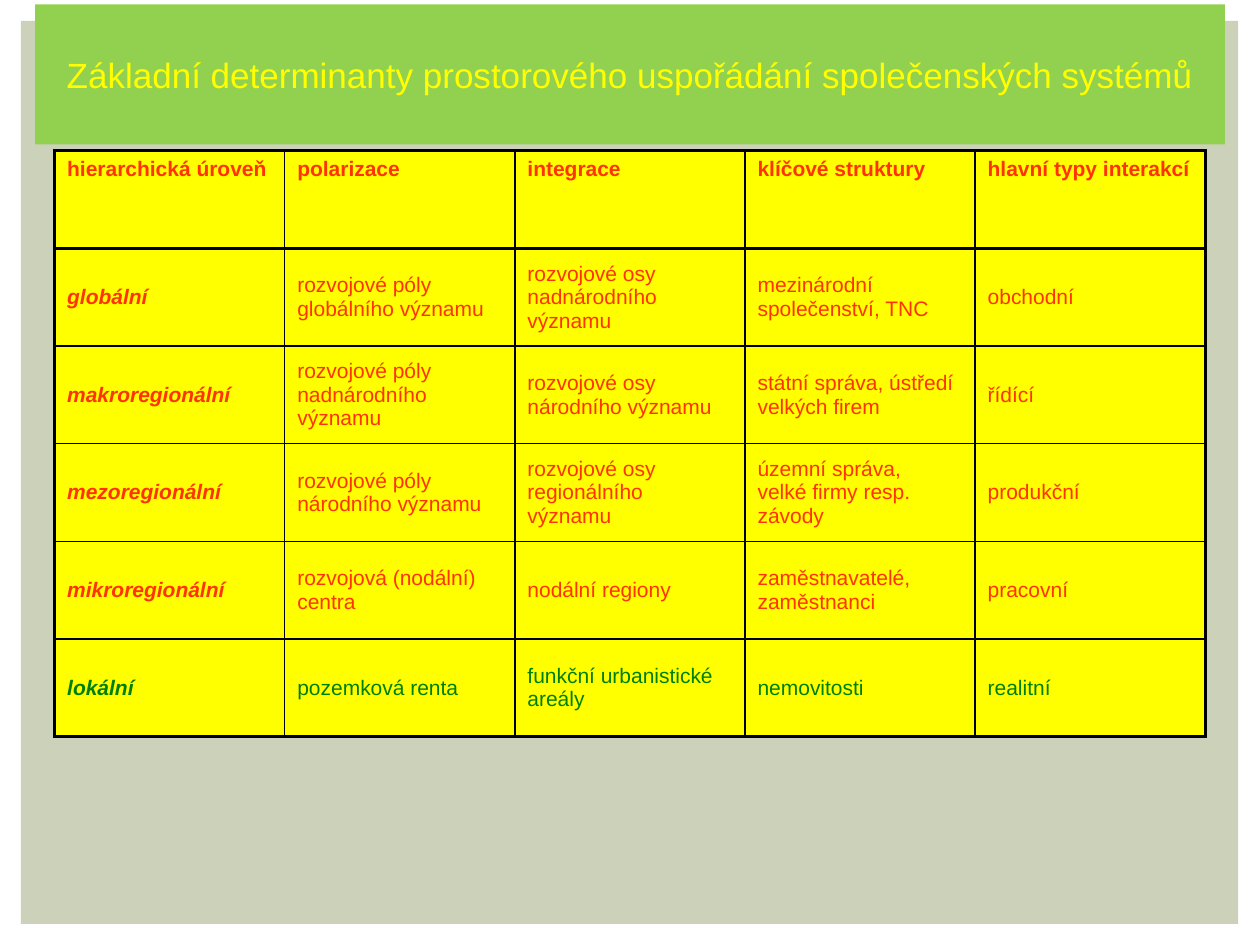
"""Build a slide with a table of spatial determinants of social systems."""
from lxml.etree import SubElement
from pptx import Presentation
from pptx.dml.color import RGBColor
from pptx.enum.shapes import MSO_SHAPE
from pptx.enum.text import MSO_ANCHOR, PP_ALIGN
from pptx.oxml.ns import qn
from pptx.util import Pt

COLORS = {
    "panel": "CCD1B9",
    "banner": "92D050",
    "yellow": "FFFF00",
    "red": "FF3300",
    "green": "008000",
    "border": "000000",
}
ROWS = [
    ["hierarchická úroveň", "polarizace", "integrace", "klíčové struktury", "hlavní typy interakcí"],
    ["globální", "rozvojové póly globálního významu", "rozvojové osy nadnárodního významu",
     "mezinárodní společenství, TNC", "obchodní"],
    ["makroregionální", "rozvojové póly nadnárodního významu", "rozvojové osy národního významu",
     "státní správa, ústředí velkých firem", "řídící"],
    ["mezoregionální", "rozvojové póly národního významu", "rozvojové osy regionálního významu",
     "územní správa,\nvelké firmy resp. závody", "produkční"],
    ["mikroregionální", "rozvojová (nodální) centra", "nodální regiony",
     "zaměstnavatelé, zaměstnanci", "pracovní"],
    ["lokální", "pozemková renta", "funkční urbanistické areály", "nemovitosti", "realitní"],
]
COLUMN_WIDTH = 131.5
ROW_HEIGHT = 55.8


def add_rectangle(page, left, top, width, height, color):
    box = page.shapes.add_shape(MSO_SHAPE.RECTANGLE, Pt(left), Pt(top), Pt(width), Pt(height))
    box.shadow.inherit = False
    box.fill.solid()
    box.fill.fore_color.rgb = RGBColor.from_string(COLORS[color])
    box.line.fill.background()
    return box


def add_border(cell, side, width):
    line = SubElement(cell._tc.get_or_add_tcPr(), qn(f"a:ln{side}"), w=str(Pt(width)))
    fill = SubElement(line, qn("a:solidFill"))
    SubElement(fill, qn("a:srgbClr"), val=COLORS["border"])


deck = Presentation()
deck.slide_width, deck.slide_height = Pt(720), Pt(540)
page = deck.slides.add_slide(deck.slide_layouts[6])

add_rectangle(page, 12, 12, 695.5, 516, "panel")
banner = add_rectangle(page, 20, 2.5, 680, 80, "banner")
banner.text_frame.word_wrap = True
banner.text_frame.vertical_anchor = MSO_ANCHOR.MIDDLE
banner.text_frame.text = "Základní determinanty prostorového uspořádání společenských systémů"
title = banner.text_frame.paragraphs[0]
title.alignment = PP_ALIGN.CENTER
title_font = title.runs[0].font
title_font.name, title_font.size = "Arial", Pt(20)
title_font.color.rgb = RGBColor.from_string(COLORS["yellow"])

last_row, last_column = len(ROWS) - 1, len(ROWS[0]) - 1
table = page.shapes.add_table(
    len(ROWS), len(ROWS[0]), Pt(31.2), Pt(86.2),
    Pt(COLUMN_WIDTH * len(ROWS[0])), Pt(ROW_HEIGHT * len(ROWS)),
).table
table.first_row = table.horz_banding = False
for column in table.columns:
    column.width = Pt(COLUMN_WIDTH)
for row in table.rows:
    row.height = Pt(ROW_HEIGHT)

for row_index, texts in enumerate(ROWS):
    text_color = "green" if row_index == last_row else "red"
    for column_index, text in enumerate(texts):
        cell = table.cell(row_index, column_index)
        add_border(cell, "L", 2 if column_index == 0 else 1)
        add_border(cell, "R", 2 if column_index == last_column else 1)
        add_border(cell, "T", 2 if row_index <= 1 else 1)
        add_border(cell, "B", 2 if row_index in (0, last_row) else 1)
        cell.fill.solid()
        cell.fill.fore_color.rgb = RGBColor.from_string(COLORS["yellow"])
        cell.vertical_anchor = MSO_ANCHOR.TOP if row_index == 0 else MSO_ANCHOR.MIDDLE
        cell.text_frame.text = text
        for para in cell.text_frame.paragraphs:
            para.alignment = PP_ALIGN.JUSTIFY if column_index == 0 else PP_ALIGN.LEFT
            for span in para.runs:
                span.font.name, span.font.size = "Arial", Pt(12)
                span.font.bold = row_index == 0 or column_index == 0
                span.font.italic = row_index > 0 and column_index == 0
                span.font.color.rgb = RGBColor.from_string(COLORS[text_color])

deck.save("out.pptx")
